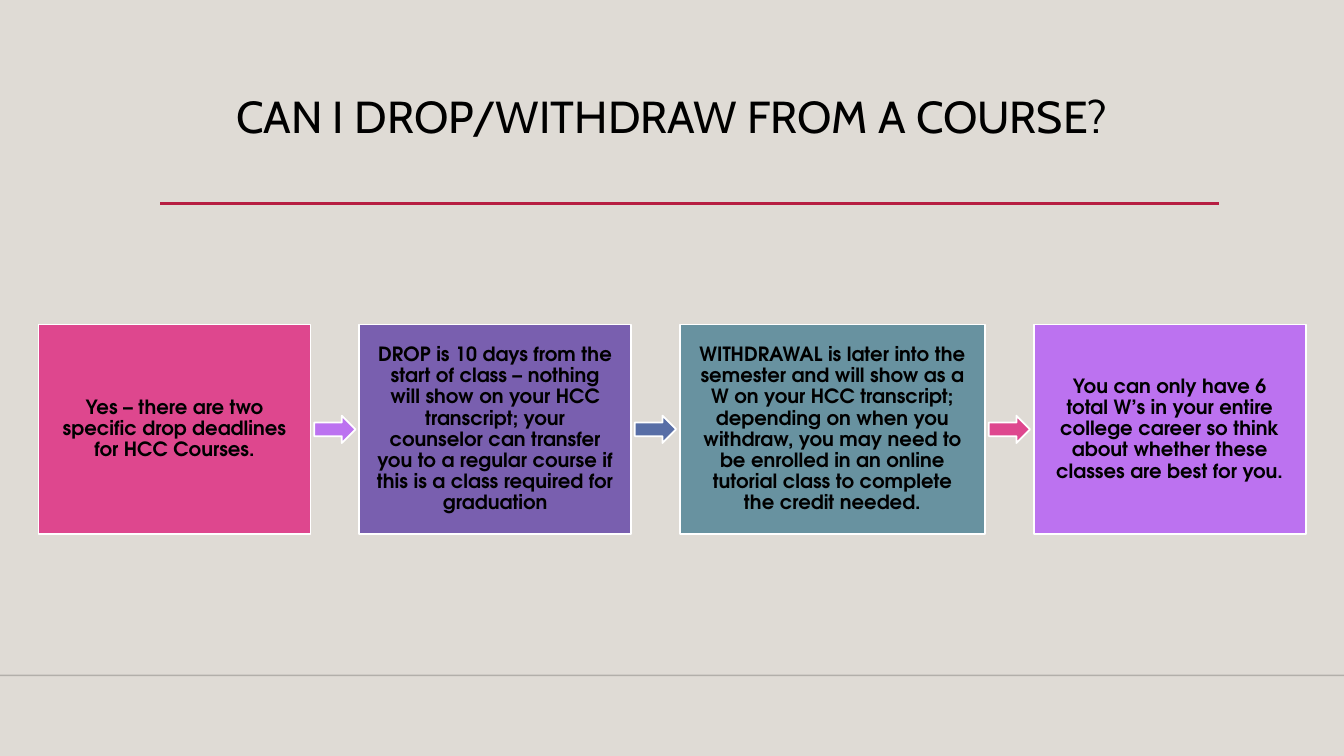
from dataclasses import dataclass

from lxml.etree import SubElement
from pptx import Presentation
from pptx.dml.color import RGBColor
from pptx.enum.shapes import MSO_CONNECTOR, MSO_SHAPE
from pptx.enum.text import MSO_ANCHOR, PP_ALIGN
from pptx.oxml.ns import qn
from pptx.shapes.autoshape import Shape
from pptx.slide import Slide
from pptx.text.text import TextFrame
from pptx.util import Cm, Pt

SLIDE_WIDTH, SLIDE_HEIGHT = 33.87, 19.05
STEP_LEFT, STEP_TOP, STEP_HEIGHT = 0.97, 8.18, 5.28
STEP_GAP = 1.22
ARROW_WIDTH, ARROW_HEIGHT = 1.04, 0.69


@dataclass
class Step:
    text: str
    fill: str
    width: float = 6.86
    arrow_fill: str = ""  # empty when no step follows


STEPS = [
    Step("Yes – there are two specific drop deadlines for HCC Courses.",
         "DE478E", arrow_fill="BC72F0"),
    Step("DROP is 10 days from the start of class – nothing will show on your "
         "HCC transcript; your counselor can transfer you to a regular course "
         "if this is a class required for graduation",
         "795FAF", arrow_fill="586EA6"),
    Step("WITHDRAWAL is later into the semester and will show as a W on your "
         "HCC transcript; depending on when you withdraw, you may need to be "
         "enrolled in an online tutorial class to complete the credit needed.",
         "6892A0", width=7.7, arrow_fill="DE478E"),
    Step("You can only have 6 total W’s in your entire college career so think "
         "about whether these classes are best for you.", "BC72F0"),
]


def color(hex_code: str) -> RGBColor:
    return RGBColor.from_string(hex_code)


def write_text(frame: TextFrame, text: str, *, font: str, size: float,
               bold: bool = False, anchor: MSO_ANCHOR = MSO_ANCHOR.MIDDLE,
               inset: float = 0.43) -> None:
    frame.word_wrap = True
    frame.vertical_anchor = anchor
    frame.margin_left = frame.margin_right = Cm(inset)
    frame.margin_top = frame.margin_bottom = Cm(inset)
    paragraph = frame.paragraphs[0]
    paragraph.alignment = PP_ALIGN.CENTER
    paragraph.line_spacing = 0.9
    run = paragraph.add_run()
    run.text = text
    run.font.name = font
    run.font.size = Pt(size)
    run.font.bold = bold
    run.font.color.rgb = color("000000")


def add_rule(slide: Slide, left: float, right: float, y: float, line: str,
             weight: float, opacity: int = 100) -> None:
    """Draw a horizontal line; opacity is in percent."""
    rule = slide.shapes.add_connector(
        MSO_CONNECTOR.STRAIGHT, Cm(left), Cm(y), Cm(right), Cm(y))
    rule.line.color.rgb = color(line)
    rule.line.width = Pt(weight)
    properties = rule._element.spPr
    if opacity < 100:
        line_color = next(properties.iter(qn("a:srgbClr")))
        SubElement(line_color, qn("a:alpha"), val=str(opacity * 1000))
    SubElement(properties, qn("a:effectLst"))


def add_block(slide: Slide, kind: MSO_SHAPE, left: float, top: float,
              width: float, height: float, fill: str) -> Shape:
    """Add a filled shape with a white outline."""
    block = slide.shapes.add_shape(kind, Cm(left), Cm(top), Cm(width), Cm(height))
    block.shadow.inherit = False
    block.fill.solid()
    block.fill.fore_color.rgb = color(fill)
    block.line.color.rgb = color("FFFFFF")
    block.line.width = Pt(1.25)
    return block


def add_steps(slide: Slide) -> None:
    left = STEP_LEFT
    arrow_top = STEP_TOP + (STEP_HEIGHT - ARROW_HEIGHT) / 2
    for step in STEPS:
        box = add_block(slide, MSO_SHAPE.RECTANGLE, left, STEP_TOP,
                        step.width, STEP_HEIGHT, step.fill)
        write_text(box.text_frame, step.text, font="TeX Gyre Adventor",
                   size=14, bold=True)
        left += step.width
        if step.arrow_fill:
            add_block(slide, MSO_SHAPE.RIGHT_ARROW,
                      left + (STEP_GAP - ARROW_WIDTH) / 2, arrow_top,
                      ARROW_WIDTH, ARROW_HEIGHT, step.arrow_fill)
        left += STEP_GAP


def main() -> None:
    deck = Presentation()
    deck.slide_width, deck.slide_height = Cm(SLIDE_WIDTH), Cm(SLIDE_HEIGHT)
    slide = deck.slides.add_slide(deck.slide_layouts[6])
    slide.background.fill.solid()
    slide.background.fill.fore_color.rgb = color("DFDBD5")

    add_rule(slide, 0, SLIDE_WIDTH, 17.02, "000001", 1, opacity=20)
    add_rule(slide, 4.04, 30.73, 5.13, "B71E42", 2.5)
    title = slide.shapes.add_textbox(Cm(3.18), Cm(2.26), Cm(27.53), Cm(3.61))
    write_text(title.text_frame, "CAN I DROP/WITHDRAW FROM A COURSE?",
               font="Cabin", size=32, anchor=MSO_ANCHOR.TOP, inset=0.13)
    add_steps(slide)
    deck.save("out.pptx")


if __name__ == "__main__":
    main()
